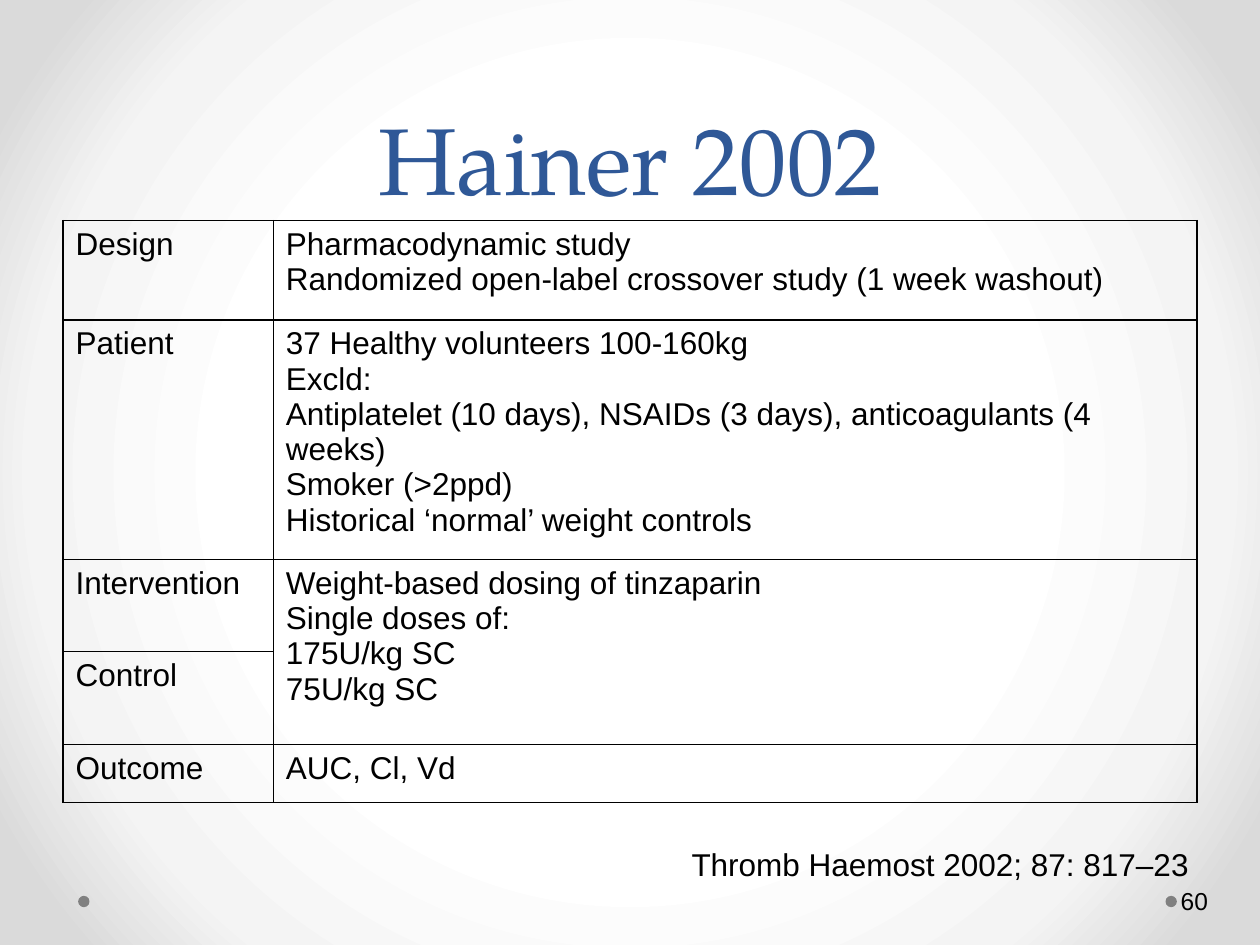
from lxml import etree
from pptx import Presentation
from pptx.dml.color import RGBColor
from pptx.enum.shapes import MSO_SHAPE as Shape
from pptx.enum.text import MSO_ANCHOR as Anchor, PP_ALIGN as Align
from pptx.oxml import parse_xml
from pptx.oxml.ns import nsdecls, qn
from pptx.util import Inches, Pt

BLUE = RGBColor(0x2F, 0x58, 0x97)
BLACK = RGBColor(0, 0, 0)
GRAY = RGBColor(0x80, 0x80, 0x80)
WHITE = RGBColor(0xFF, 0xFF, 0xFF)
PALE = RGBColor(0xF4, 0xF4, 0xF4)
SILVER = RGBColor(0xDA, 0xDA, 0xDA)

COLUMN_WIDTHS = [1.67, 7.33]
STUDY_ROWS = [
    (0.79, "Design", ["Pharmacodynamic study",
                      "Randomized open-label crossover study (1 week washout)"]),
    (1.9, "Patient", ["37 Healthy volunteers 100-160kg",
                      "Excld:",
                      "Antiplatelet (10 days), NSAIDs (3 days), anticoagulants (4 weeks)",
                      "Smoker (>2ppd)",
                      "Historical ‘normal’ weight controls"]),
    (0.73, "Intervention", ["Weight-based dosing of tinzaparin",
                            "Single doses of:",
                            "175U/kg SC",
                            "75U/kg SC"]),
    (0.74, "Control", None),  # shares the text of the row above
    (0.46, "Outcome", ["AUC, Cl, Vd"]),
]


class SlideBuilder:
    body_font = {"name": "Arial", "size": Pt(18)}
    title_font = {"name": "TeX Gyre Pagella", "size": Pt(54)}

    def __init__(self, slide):
        self.slide = slide

    def fill_text(self, frame, lines, font_values, color=BLACK):
        for index, line in enumerate(lines):
            paragraph = frame.add_paragraph() if index else frame.paragraphs[0]
            run = paragraph.add_run()
            run.text = line
            for name, value in font_values.items():
                setattr(run.font, name, value)
            run.font.color.rgb = color

    def background(self, stops):
        self.slide.background.fill.solid()
        solid = next(self.slide.element.iter(qn("a:solidFill")))
        stop_xml = "".join(
            f'<a:gs pos="{percent * 1000}"><a:srgbClr val="{color}"/></a:gs>'
            for percent, color in stops)
        gradient = parse_xml(
            f'<a:gradFill {nsdecls("a")} rotWithShape="1"><a:gsLst>{stop_xml}</a:gsLst>'
            '<a:path path="circle">'
            '<a:fillToRect l="50000" t="50000" r="50000" b="50000"/>'
            '</a:path></a:gradFill>')
        solid.getparent().replace(solid, gradient)

    def title(self, text, left, top, width, height):
        title = self.slide.shapes.title
        box = {"left": left, "top": top, "width": width, "height": height}
        for name, value in box.items():
            setattr(title, name, Inches(value))
        frame = title.text_frame
        frame.vertical_anchor = Anchor.BOTTOM
        self.fill_text(frame, [text], self.title_font, BLUE)
        frame.paragraphs[0].alignment = Align.CENTER
        frame.paragraphs[0].line_spacing = Pt(58)

    def dot(self, left, top, size):
        shape = self.slide.shapes.add_shape(
            Shape.OVAL, *map(Inches, (left, top, size, size)))
        shape.shadow.inherit = False
        shape.fill.solid()
        shape.fill.fore_color.rgb = GRAY
        shape.line.fill.background()

    def text(self, text, left, top, width, height, size=18, **frame_values):
        box = self.slide.shapes.add_textbox(
            *map(Inches, (left, top, width, height)))
        frame = box.text_frame
        frame.word_wrap = True
        for name, value in frame_values.items():
            setattr(frame, name, value)
        self.fill_text(frame, [text], {**self.body_font, "size": Pt(size)})

    def borders(self, cell):
        properties = cell._tc.get_or_add_tcPr()
        for side in ("lnL", "lnR", "lnT", "lnB"):
            line = etree.SubElement(properties, qn(f"a:{side}"), w=str(Pt(1)))
            fill = etree.SubElement(line, qn("a:solidFill"))
            etree.SubElement(fill, qn("a:srgbClr"), val=str(BLACK))

    def table(self, rows, widths, left, top):
        heights = [row[0] for row in rows]
        table = self.slide.shapes.add_table(
            len(rows), len(widths),
            *map(Inches, (left, top, sum(widths), sum(heights)))).table
        table.first_row = table.horz_banding = False
        for column, width in zip(table.columns, widths):
            column.width = Inches(width)
        for index, (height, label, details) in enumerate(rows):
            table.rows[index].height = Inches(height)
            label_cell, detail_cell = table.rows[index].cells
            for cell in (label_cell, detail_cell):
                self.borders(cell)
                cell.fill.background()
            self.fill_text(label_cell.text_frame, [label], self.body_font)
            if details is None:
                table.cell(index - 1, 1).merge(detail_cell)
            else:
                self.fill_text(detail_cell.text_frame, details, self.body_font)


def main():
    presentation = Presentation()
    presentation.slide_width = Inches(10)
    presentation.slide_height = Inches(7.5)
    title_only = presentation.slide_layouts[5]
    builder = SlideBuilder(presentation.slides.add_slide(title_only))

    # Backdrop and footer dots
    builder.background([(50, WHITE), (76, PALE), (92, SILVER)])
    for left in (9.25, 0.62):
        builder.dot(left, 7.11, 0.09)

    # Title and study table
    builder.title("Hainer 2002", 0.5, 0, 9, 1.75)
    builder.table(STUDY_ROWS, COLUMN_WIDTHS, 0.5, 1.75)

    # Slide number and citation
    builder.text("60", 9.34, 6.95, 0.61, 0.4, size=14,
                 vertical_anchor=Anchor.MIDDLE,
                 margin_left=Inches(0.03), margin_right=Inches(0.05))
    builder.text("Thromb Haemost 2002; 87: 817–23", 5.39, 6.66, 4.17, 0.4)

    presentation.save("out.pptx")


if __name__ == "__main__":
    main()
